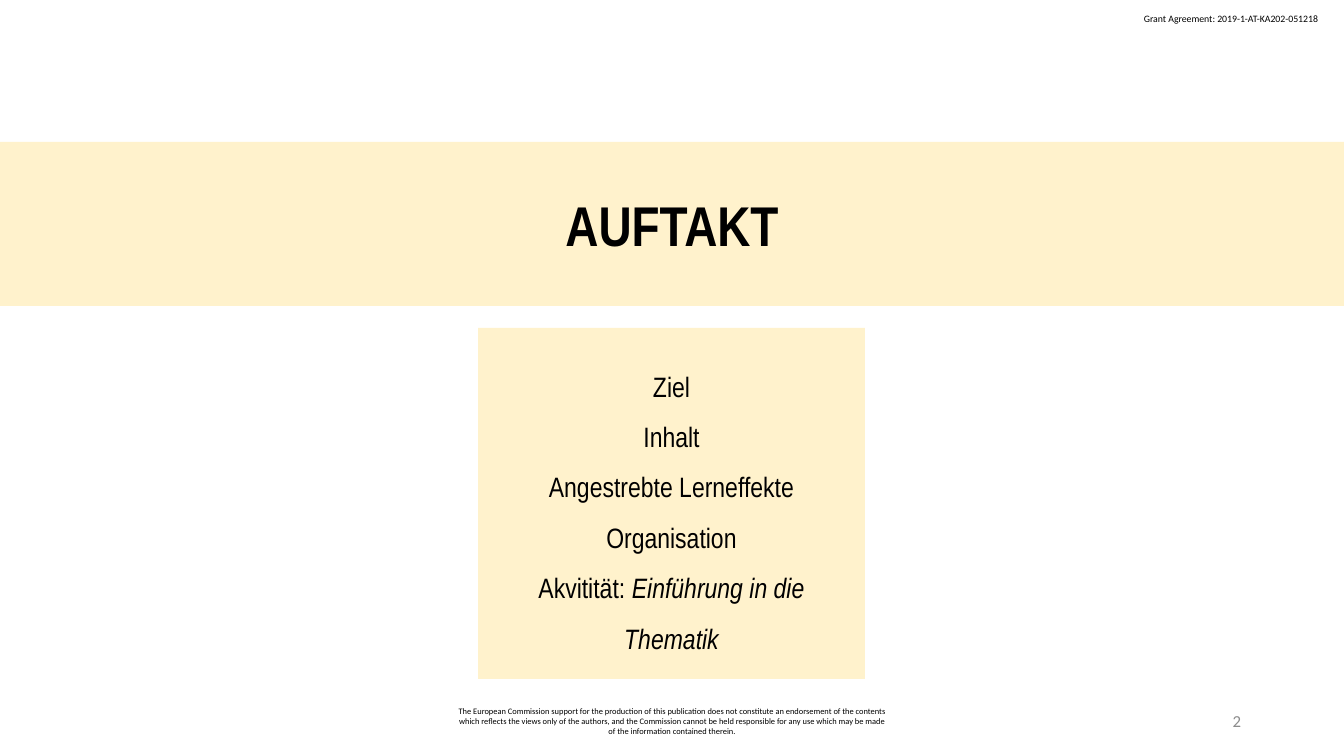
import pptx
import pptx.dml.color
import pptx.enum.text
import pptx.oxml
import pptx.oxml.ns
import pptx.util

ALIGN = pptx.enum.text.PP_ALIGN
ANCHOR = pptx.enum.text.MSO_ANCHOR
EMU_PER_PX = 914400 / 100.8


def px(length):
    return pptx.util.Emu(round(length * EMU_PER_PX))


def colour(value):
    return pptx.dml.color.RGBColor.from_string(value)


def write(paragraph, text, size, font, ink="000000", bold=False, italic=False):
    run = paragraph.add_run()
    run.text = text
    run.font.size = pptx.util.Pt(size)
    run.font.name = font
    run.font.bold = bold
    run.font.italic = italic
    run.font.color.rgb = colour(ink)


class SectionSlide:
    heading_font = "Arial Narrow"
    small_font = "Calibri"
    panel_fill = "FFF2CC"

    def __init__(self, deck):
        self.slide = deck.slides.add_slide(deck.slide_layouts[1])

    def panel(self, placeholder, left, top, width, height):
        placeholder.left, placeholder.top = px(left), px(top)
        placeholder.width, placeholder.height = px(width), px(height)
        placeholder.fill.solid()
        placeholder.fill.fore_color.rgb = colour(self.panel_fill)
        frame = placeholder.text_frame
        frame.word_wrap = True
        frame.auto_size = pptx.enum.text.MSO_AUTO_SIZE.NONE
        frame.vertical_anchor = ANCHOR.MIDDLE
        frame.margin_left = frame.margin_right = px(13)
        frame.margin_top = frame.margin_bottom = px(7)
        return frame

    def title(self, text, *box):
        heading = self.panel(self.slide.shapes.title, *box).paragraphs[0]
        heading.alignment = ALIGN.CENTER
        write(heading, text, 40, self.heading_font, bold=True)

    def agenda(self, items, *box):
        frame = self.panel(self.slide.placeholders[1], *box)
        for index, (topic, detail) in enumerate(items):
            entry = frame.add_paragraph() if index else frame.paragraphs[0]
            properties = entry._p.get_or_add_pPr()
            properties.set("marL", "0")
            properties.set("indent", "0")
            properties.append(pptx.oxml.parse_xml(
                f"<a:buNone {pptx.oxml.ns.nsdecls('a')}/>"))
            entry.alignment = ALIGN.CENTER
            entry.line_spacing = 1.5
            entry.space_before = pptx.util.Pt(0)
            write(entry, topic, 20, self.heading_font)
            if detail:
                write(entry, detail, 20, self.heading_font, italic=True)

    def note(self, text, left, top, width, height, size, ink="000000",
             align=ALIGN.LEFT, anchor=ANCHOR.MIDDLE, wrap=True):
        box = self.slide.shapes.add_textbox(px(left), px(top), px(width), px(height))
        frame = box.text_frame
        frame.word_wrap = wrap
        frame.vertical_anchor = anchor
        frame.paragraphs[0].alignment = align
        write(frame.paragraphs[0], text, size, self.small_font, ink=ink)


def main():
    deck = pptx.Presentation()
    deck.slide_width, deck.slide_height = px(1344), px(756)

    opening = SectionSlide(deck)
    opening.title("AUFTAKT", 0, 142, 1344, 164)
    opening.agenda([
        ("Ziel", ""),
        ("Inhalt", ""),
        ("Angestrebte Lerneffekte", ""),
        ("Organisation", ""),
        ("Akvitität: ", "Einführung in die Thematik"),
    ], 478, 328, 387, 351)
    opening.note("Grant Agreement: 2019-1-AT-KA202-051218",
                 1134, 8, 198, 22, 7, anchor=ANCHOR.TOP, wrap=False)
    opening.note(
        "The European Commission support for the production of this publication "
        "does not constitute an endorsement of the contents which reflects the "
        "views only of the authors, and the Commission cannot be held responsible "
        "for any use which may be made of the information contained therein.",
        445, 701, 454, 40, 6, align=ALIGN.CENTER)
    opening.note("2", 949, 701, 302, 40, 12, ink="8C8C8C", align=ALIGN.RIGHT)

    deck.save("out.pptx")


if __name__ == "__main__":
    main()
